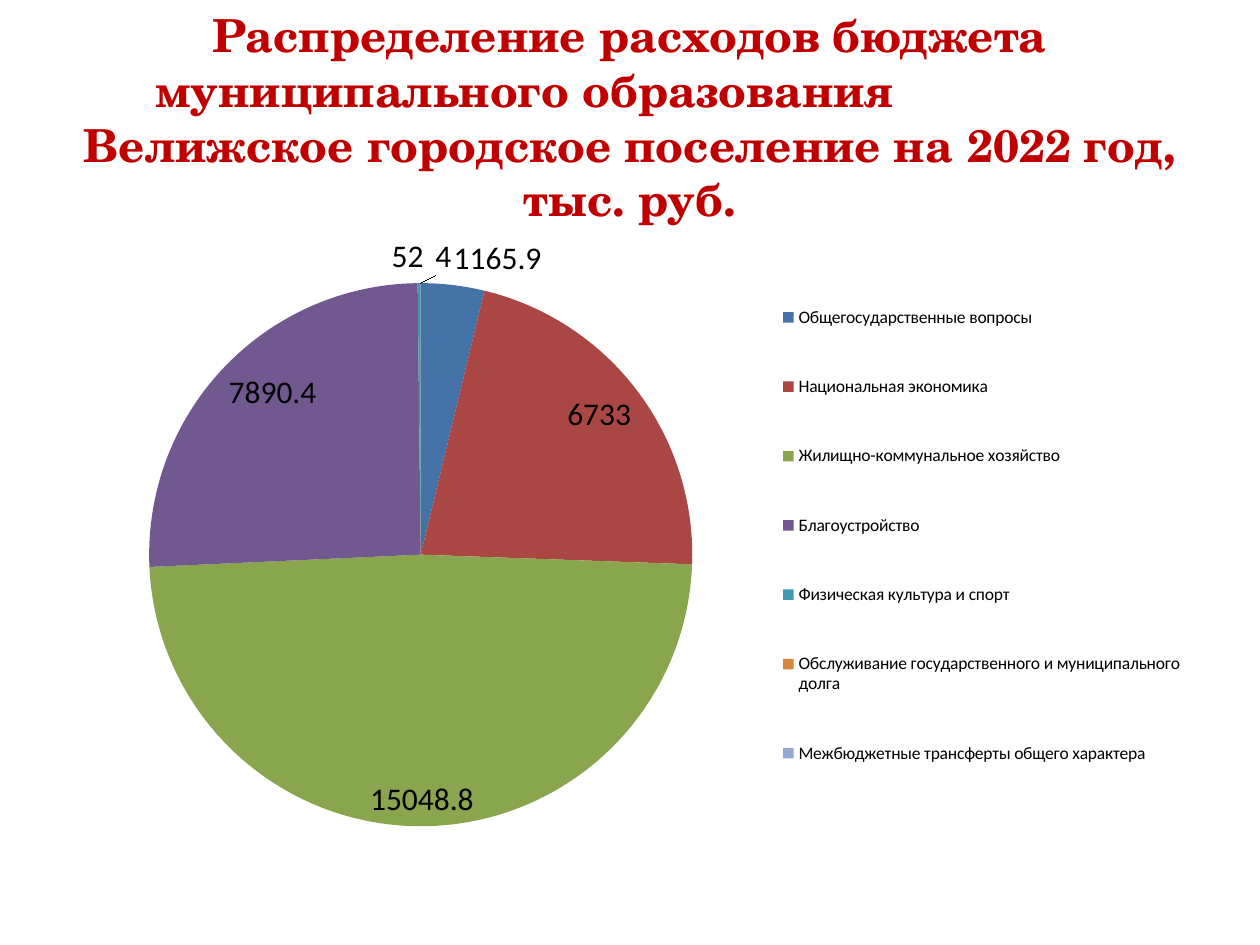
from lxml import etree
from pptx import Presentation
from pptx.chart.data import CategoryChartData
from pptx.dml.color import RGBColor
from pptx.enum.chart import XL_CHART_TYPE, XL_LABEL_POSITION, XL_LEGEND_POSITION
from pptx.enum.text import MSO_ANCHOR, PP_ALIGN
from pptx.oxml.ns import qn
from pptx.util import Inches, Pt

PIE = XL_CHART_TYPE.PIE
RIGHT = XL_LEGEND_POSITION.RIGHT
INSIDE = XL_LABEL_POSITION.INSIDE_END
OUTSIDE = XL_LABEL_POSITION.OUTSIDE_END
MIDDLE = MSO_ANCHOR.MIDDLE
CENTER = PP_ALIGN.CENTER

TITLE_LINES = [
    ("Распределение расходов бюджета", 0),
    ("муниципального образования", 1.67),
    ("Велижское городское поселение на 2022 год, тыс. руб.", 0),
]
# category, value, colour, label position, label offset
EXPENSES = [
    ("Общегосударственные вопросы", 1165.9, "4572A7", OUTSIDE, None),
    ("Национальная экономика", 6733, "AA4643", INSIDE, None),
    ("Жилищно-коммунальное хозяйство", 15048.8, "89A54E", INSIDE, None),
    ("Благоустройство", 7890.4, "71588F", INSIDE, None),
    ("Физическая культура и спорт", 52, "4198AF", OUTSIDE, -0.01),
    ("Обслуживание государственного и муниципального долга", 4, "DB843D", OUTSIDE, 0.02),
    ("Межбюджетные трансферты общего характера", 0, "93A9CF", None, None),
]


def color(value):
    """Turn a hex string into a colour."""
    return RGBColor.from_string(value)


def place(shape, left, top, width, height):
    """Move and size a shape, in inches."""
    shape.left, shape.top = Inches(left), Inches(top)
    shape.width, shape.height = Inches(width), Inches(height)


def write(para, text, *, size, font, fill, bold=False, right_margin=0):
    """Write one centred, formatted paragraph."""
    para.alignment = CENTER
    para._p.get_or_add_pPr().set("marR", str(Inches(right_margin)))
    span = para.add_run()
    span.text = text
    span.font.size, span.font.name, span.font.bold = Pt(size), font, bold
    span.font.color.rgb = color(fill)


def add_title(page):
    """Fill the title placeholder."""
    title = page.shapes.title
    place(title, 0.5, 0.3, 9, 1.25)
    frame = title.text_frame
    frame.word_wrap = True
    frame.vertical_anchor = MIDDLE
    for index, (text, margin) in enumerate(TITLE_LINES):
        para = frame.add_paragraph() if index else frame.paragraphs[0]
        write(para, text, size=26, font="TeX Gyre Schola", fill="C00000",
              bold=True, right_margin=margin)


def make_layout(**settings):
    """Build a manual layout for a chart part."""
    layout = etree.Element(qn("c:layout"))
    manual = etree.SubElement(layout, qn("c:manualLayout"))
    for name, value in settings.items():
        etree.SubElement(manual, qn(f"c:{name}"), val=str(value))
    return layout


def set_layout(parent, layout, index):
    """Replace the layout of a chart part."""
    for old in parent.findall(qn("c:layout")):
        parent.remove(old)
    parent.insert(index, layout)


def format_label(series, index, position, offset):
    """Place the label of one slice, or hide it without a position."""
    series.points[index].data_label.position = position or OUTSIDE
    label = series._element.find(f"{qn('c:dLbls')}/{qn('c:dLbl')}[{index + 1}]")
    if position is None:
        for child in list(label)[1:]:
            label.remove(child)
        etree.SubElement(label, qn("c:delete"), val="1")
    elif offset:
        set_layout(label, make_layout(x=offset, y=0), 1)


def add_pie(page):
    """Add the pie of expenses with its legend."""
    data = CategoryChartData()
    data.categories = [row[0] for row in EXPENSES]
    data.add_series("Series 1", [row[1] for row in EXPENSES])
    chart = page.shapes.add_chart(PIE, Inches(0.5), Inches(1.75), Inches(9),
                                  Inches(4.95), data).chart
    chart.has_title = False
    chart.font.size, chart.font.name = Pt(18), "Calibri"
    chart.font.color.rgb = color("000000")
    chart.has_legend = True
    chart.legend.position = RIGHT
    chart.legend.include_in_layout = False
    chart.legend.font.size = Pt(10)

    plot = chart.plots[0]
    plot.vary_by_categories = True
    series = plot.series[0]
    series.data_labels.show_value = True
    for index, (_, _, fill, position, offset) in enumerate(EXPENSES):
        slice_fill = series.points[index].format.fill
        slice_fill.solid()
        slice_fill.fore_color.rgb = color(fill)
        format_label(series, index, position, offset)

    area = chart._chartSpace.chart.plotArea
    set_layout(area, make_layout(layoutTarget="inner", xMode="edge", yMode="edge",
                                 x=0.076, y=0.1, w=0.479, h=0.872), 0)
    set_layout(chart.legend._element,
               make_layout(xMode="edge", yMode="edge", x=0.63, y=0.06, w=0.36, h=0.89), 1)


def main():
    """Build and save the deck."""
    deck = Presentation()
    deck.slide_width, deck.slide_height = Inches(10), Inches(7.5)
    page = deck.slides.add_slide(deck.slide_layouts[5])
    add_title(page)
    add_pie(page)
    deck.save("out.pptx")


if __name__ == "__main__":
    main()
